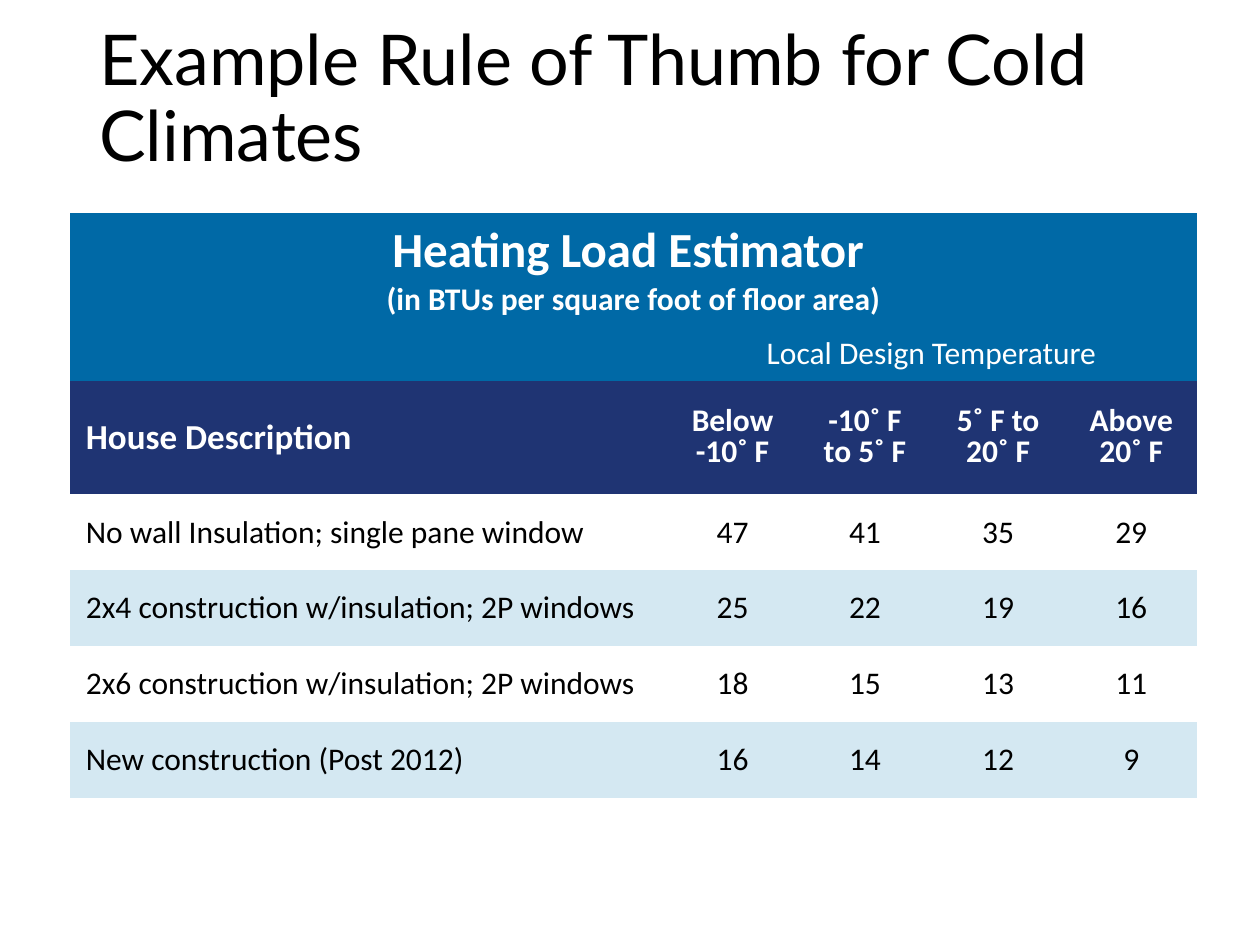
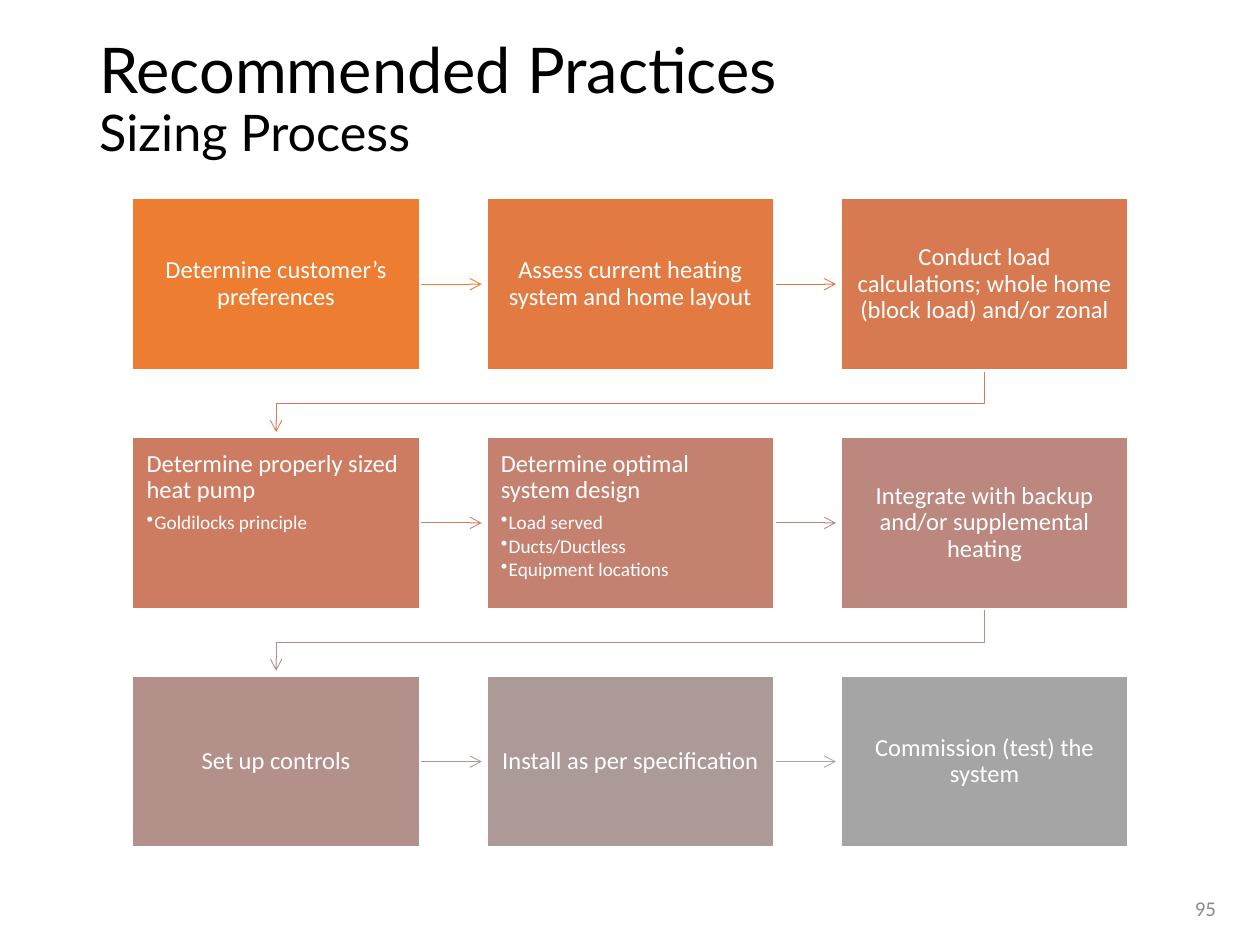
from pptx import Presentation
from pptx.dml.color import RGBColor
from pptx.enum.shapes import MSO_CONNECTOR, MSO_SHAPE
from pptx.enum.text import MSO_ANCHOR, MSO_AUTO_SIZE, PP_ALIGN
from pptx.oxml.ns import qn
from pptx.util import Pt
from lxml.etree import SubElement

WHITE, BLACK, GREY = "FFFFFF", "000000", "8C8C8C"
BLUE, NAVY, PALE = "0069A6", "1F3473", "D4E8F2"
HEAD, BODY = "Lato", "Calibri"
PLAIN = "{2D5ABB26-0587-4C30-8999-92F81FD0307C}"

COLS = [340.6, 76.2, 75.2, 77, 75.2]
ROWS = [65.4, 30, 64.8] + [43.4] * 4
TEMPS = ["Below\n-10˚ F", "-10˚ F to 5˚ F", "5˚ F to 20˚ F", "Above 20˚ F"]
LOADS = [
    ("No wall Insulation; single pane window", 47, 41, 35, 29),
    ("2x4 construction w/insulation; 2P windows", 25, 22, 19, 16),
    ("2x6 construction w/insulation; 2P windows", 18, 15, 13, 11),
    ("New construction (Post 2012)", 16, 14, 12, 9),
]

# Fill, colour of the arrow that leaves the box, heading, bullets
STEPS = [
    ("ED7D31", "ED7D31", "Determine customer’s preferences", []),
    ("E27A42", "E07A44", "Assess current heating system and home layout", []),
    ("D87A51", "D57B56",
     "Conduct load calculations; whole home (block load) and/or zonal", []),
    ("CE7C61", "CA7E67", "Determine properly sized heat pump",
     ["Goldilocks principle"]),
    ("C48170", "BF8478", "Determine optimal\vsystem design",
     ["Load served", "Ducts/Ductless", "Equipment locations"]),
    ("BC877E", "B68D88",
     "Integrate with backup and/or supplemental heating", []),
    ("B4908B", "AD9897", "Set up controls", []),
    ("AC9A99", "A5A5A5", "Install as per specification", []),
    ("A5A5A5", None, "Commission (test) the system", []),
]


def rgb(code):
    return RGBColor.from_string(code)


def style(par, size, color, face=BODY, bold=False, align=PP_ALIGN.LEFT,
          lead=1.0, after=0):
    par.alignment = align
    par.line_spacing = lead
    par.space_before = Pt(0)
    par.space_after = Pt(after)
    font = par.font
    font.name, font.size, font.bold = face, Pt(size), bold
    font.color.rgb = rgb(color)


def add_slide(deck, lines):
    """Add a slide whose title holds (text, size) lines."""
    slide = deck.slides.add_slide(deck.slide_layouts[5])
    title = slide.shapes.title
    title.left, title.top = Pt(49.5), Pt(21.6)
    title.width, title.height = Pt(621), Pt(72)
    frame = title.text_frame
    frame.text = "\n".join(text for text, _ in lines)
    frame.auto_size = MSO_AUTO_SIZE.NONE
    frame.word_wrap = True
    frame.vertical_anchor = MSO_ANCHOR.MIDDLE
    for par, (_, size) in zip(frame.paragraphs, lines):
        style(par, size, BLACK, HEAD, lead=0.9)
    return slide


def fill_cell(cell, fill, text="", sizes=(18,), color=WHITE, **look):
    """Colour a cell and set its lines, the last size serving the rest."""
    cell.fill.solid()
    cell.fill.fore_color.rgb = rgb(fill)
    cell.margin_left = cell.margin_right = Pt(9.2)
    cell.margin_top = cell.margin_bottom = Pt(4.3)
    cell.vertical_anchor = MSO_ANCHOR.MIDDLE
    cell.text = text
    for num, par in enumerate(cell.text_frame.paragraphs):
        style(par, sizes[min(num, len(sizes) - 1)], color, **look)


def add_loads(slide, left, top):
    frame = slide.shapes.add_table(len(ROWS), len(COLS), Pt(left), Pt(top),
                                   Pt(sum(COLS)), Pt(sum(ROWS)))
    for tag in frame.element.iter(qn("a:tableStyleId")):
        tag.text = PLAIN
    table = frame.table
    table.first_row = table.horz_banding = False
    for col, width in zip(table.columns, COLS):
        col.width = Pt(width)
    for row, height in zip(table.rows, ROWS):
        row.height = Pt(height)

    mid = PP_ALIGN.CENTER
    cell = table.cell
    cell(0, 0).merge(cell(0, 4))
    cell(1, 1).merge(cell(1, 4))
    fill_cell(cell(0, 0), BLUE,
              "Heating Load Estimator \n(in BTUs per square foot of floor area)",
              (28, 18), bold=True, align=mid)
    fill_cell(cell(1, 0), BLUE)
    fill_cell(cell(1, 1), BLUE, "Local Design Temperature", align=mid, lead=0.9)
    fill_cell(cell(2, 0), NAVY, "House Description", (20,), bold=True)
    for col, temp in enumerate(TEMPS, 1):
        fill_cell(cell(2, col), NAVY, temp, bold=True, align=mid, lead=0.8)
    for row, loads in enumerate(LOADS, 3):
        fill = WHITE if row % 2 else PALE
        for col, item in enumerate(loads):
            fill_cell(cell(row, col), fill, str(item), color=BLACK,
                      align=mid if col else PP_ALIGN.LEFT)


def add_bullet(par):
    props = par._p.get_or_add_pPr()
    props.set("marL", str(Pt(4.5)))
    props.set("indent", str(-Pt(4.5)))
    SubElement(props, qn("a:buChar")).set("char", "•")


def add_step(slide, box, fill, head, points):
    shape = slide.shapes.add_shape(MSO_SHAPE.RECTANGLE, *map(Pt, box))
    shape.shadow.inherit = False
    shape.fill.solid()
    shape.fill.fore_color.rgb = rgb(fill)
    shape.line.color.rgb = rgb(WHITE)
    shape.line.width = Pt(1)
    frame = shape.text_frame
    frame.word_wrap = True
    frame.margin_left = frame.margin_right = Pt(8)
    frame.margin_top = frame.margin_bottom = Pt(8)
    frame.vertical_anchor = MSO_ANCHOR.TOP if points else MSO_ANCHOR.MIDDLE
    first = frame.paragraphs[0]
    first.text = head
    style(first, 14, WHITE, lead=0.9, after=4.9,
          align=PP_ALIGN.LEFT if points else PP_ALIGN.CENTER)
    for point in points:
        par = frame.add_paragraph()
        par.text = point
        add_bullet(par)
        style(par, 11, WHITE, lead=0.9, after=1.65)


def add_arrow(slide, color, spots):
    """Draw an arrow through the spots, straight or bent."""
    spots = [(Pt(x), Pt(y)) for x, y in spots]
    if len(spots) == 2:
        arrow = slide.shapes.add_connector(MSO_CONNECTOR.STRAIGHT,
                                           *spots[0], *spots[1])
        SubElement(arrow._element.spPr, qn("a:effectLst"))
    else:
        pen = slide.shapes.build_freeform(*spots[0])
        pen.add_line_segments(spots[1:], close=False)
        arrow = pen.convert_to_shape()
        arrow.shadow.inherit = False
        arrow.fill.background()
    arrow.line.color.rgb = rgb(color)
    arrow.line.width = Pt(0.5)
    tail = SubElement(arrow.line._get_or_add_ln(), qn("a:tailEnd"))
    tail.set("type", "arrow")


def add_flow(slide, left, top, wide=164, high=98, gap=38.4, count=3):
    """Lay the steps in rows, each joined to the next by an arrow."""
    for num, (fill, line, head, points) in enumerate(STEPS):
        row, col = divmod(num, count)
        x, y = left + col * (wide + gap), top + row * (high + gap)
        add_step(slide, (x, y, wide, high), fill, head, points)
        if not line:
            continue
        end = x + wide
        if col < count - 1:
            mid = y + high / 2
            spots = [(end + 1, mid), (end + 35.5, mid)]
        else:
            mid, base = x + wide / 2, y + high
            start = left + wide / 2
            turn = base + gap / 2
            spots = [(mid, base + 1), (mid, turn), (start, turn),
                     (start, base + 35.5)]
        add_arrow(slide, line, spots)


def add_number(slide, text):
    box = slide.shapes.add_textbox(Pt(540), Pt(504.5), Pt(162), Pt(28.8))
    frame = box.text_frame
    frame.word_wrap = True
    frame.vertical_anchor = MSO_ANCHOR.MIDDLE
    frame.text = text
    style(frame.paragraphs[0], 12, GREY, align=PP_ALIGN.RIGHT)


def main():
    deck = Presentation()
    deck.slide_width, deck.slide_height = Pt(720), Pt(540)

    rule = add_slide(deck, [("Example Rule of Thumb for Cold Climates", 40)])
    add_loads(rule, 39.9, 121.7)

    sizing = add_slide(deck, [("Recommended Practices", 36),
                              ("Sizing Process", 28.8)])
    add_flow(sizing, 75.8, 113.4)
    add_number(sizing, "95")

    deck.save("out.pptx")


if __name__ == "__main__":
    main()
